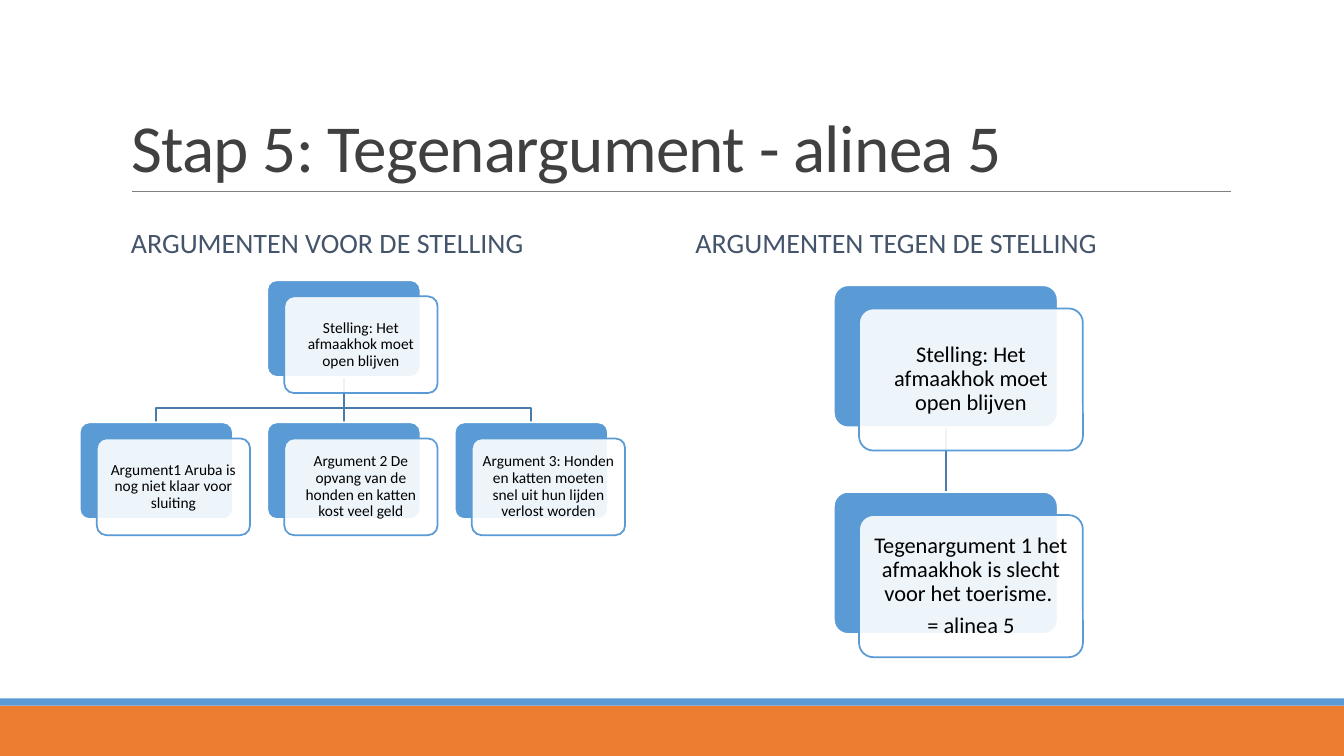
from pptx import Presentation
from pptx.dml.color import RGBColor
from pptx.enum.shapes import MSO_CONNECTOR, MSO_SHAPE
from pptx.enum.text import MSO_ANCHOR, MSO_AUTO_SIZE, PP_ALIGN
from pptx.oxml.ns import qn
from pptx.util import Inches, Pt
from lxml.etree import SubElement

HUES = {
    "orange": "ED7D31", "blue": "5B9BD5", "wire": "497CAB", "rule": "808080",
    "title": "404040", "head": "44546A", "black": "000000", "white": "FFFFFF",
}


def write(shape, text, size, hue, anchor=MSO_ANCHOR.MIDDLE, align=PP_ALIGN.LEFT,
          inset=None, space=0.9, after=0, track=None):
    frame = shape.text_frame
    frame.text = text
    frame.word_wrap = True
    frame.auto_size = MSO_AUTO_SIZE.NONE
    frame.vertical_anchor = anchor
    if inset is not None:
        frame.margin_left = frame.margin_right = Inches(inset)
        frame.margin_top = frame.margin_bottom = Inches(inset)
    for para in frame.paragraphs:
        para.alignment = align
        para.line_spacing = space
        para.space_before = Pt(0)
        para.space_after = Pt(after)
        for run in para.runs:
            run.font.name = "Calibri"
            run.font.size = Pt(size)
            run.font.color.rgb = RGBColor.from_string(HUES[hue])
            if track:
                run.font._element.set("spc", str(track))


def paint(shape, fill=None, line=None, width=1.25, alpha=None):
    """Set fill, line and opacity in percent, and remove the shadow."""
    if fill:
        shape.fill.solid()
        shape.fill.fore_color.rgb = RGBColor.from_string(HUES[fill])
    if alpha:
        color = shape._element.spPr.find(".//" + qn("a:srgbClr"))
        SubElement(color, qn("a:alpha")).set("val", str(alpha * 1000))
    if line:
        shape.line.color.rgb = RGBColor.from_string(HUES[line])
        shape.line.width = Pt(width)
    else:
        shape.line.fill.background()
    SubElement(shape._element.spPr, qn("a:effectLst"))


deck = Presentation()
deck.slide_width, deck.slide_height = Inches(13.33), Inches(7.5)
slide = deck.slides.add_slide(deck.slide_layouts[5])
shapes = slide.shapes

# Footer bands and title rule
for top, high, hue in [(7, 0.5, "orange"), (6.93, 0.07, "blue")]:
    band = shapes.add_shape(MSO_SHAPE.RECTANGLE, 0, Inches(top),
                            deck.slide_width, Inches(high))
    paint(band, hue)
rule = shapes.add_connector(MSO_CONNECTOR.STRAIGHT, Inches(1.31), Inches(1.9),
                            Inches(12.21), Inches(1.9))
paint(rule, line="rule", width=0.5)

# Title and column heads
title = shapes.title
title.left, title.top = Inches(1.2), Inches(0.31)
title.width, title.height = Inches(11), Inches(1.59)
write(title, "Stap 5: Tegenargument - alinea 5", 48, "title",
      anchor=MSO_ANCHOR.BOTTOM, space=0.85, track=-50)
for left, text in [(1.2, "ARGUMENTEN VOOR DE STELLING"),
                   (6.8, "ARGUMENTEN TEGEN DE STELLING")]:
    head = shapes.add_textbox(Inches(left), Inches(2.02), Inches(5.4), Inches(0.81))
    write(head, text, 20, "head")

# Argument trees: one claim above a row of arguments
claim = "Stelling: Het afmaakhok moet open blijven"
trees = [
    dict(left=2.65, top=2.78, low=4.19, wide=1.52, high=0.96, dx=0.17, dy=0.16,
         size=11, inset=0.05, args=[
             "Argument1 Aruba is nog niet klaar voor sluiting",
             "Argument 2 De opvang van de honden en katten kost veel geld",
             "Argument 3: Honden en katten moeten snel uit hun lijden verlost worden"]),
    dict(left=8.27, top=2.83, low=4.88, wide=2.22, high=1.41, dx=0.25, dy=0.23,
         size=16, inset=0.07, args=[
             "Tegenargument 1 het afmaakhok is slecht voor het toerisme. \n= alinea 5"]),
]
step, drop = 1.86, 0.14
for tree in trees:
    wide, high, low = tree["wide"], tree["high"], tree["low"]
    root = tree["left"] + wide / 2
    base = tree["top"] + high
    cards = [(tree["left"], tree["top"], claim)]
    for i, text in enumerate(tree["args"]):
        shift = (i - (len(tree["args"]) - 1) / 2) * step
        cards.append((tree["left"] + shift, low, text))
        if shift:
            pen = shapes.build_freeform(Inches(root), Inches(base))
            pen.add_line_segments(
                [(Inches(x), Inches(y)) for x, y in [
                    (root, low - drop), (root + shift, low - drop),
                    (root + shift, low)]], close=False)
            wire = pen.convert_to_shape()
            wire.fill.background()
        else:
            wire = shapes.add_connector(MSO_CONNECTOR.STRAIGHT, Inches(root),
                                        Inches(base), Inches(root), Inches(low))
        paint(wire, line="wire")

    for left, top, text in cards:
        for dx, dy, fill, line, alpha in [
                (0, 0, "blue", "white", None),
                (tree["dx"], tree["dy"], "white", "blue", 90)]:
            card = shapes.add_shape(MSO_SHAPE.ROUNDED_RECTANGLE, Inches(left + dx),
                                    Inches(top + dy), Inches(wide), Inches(high))
            card.adjustments[0] = 0.1
            paint(card, fill, line, alpha=alpha)
        write(card, text, tree["size"], "black", align=PP_ALIGN.CENTER,
              inset=tree["inset"], after=0.35 * tree["size"])

deck.save("out.pptx")
